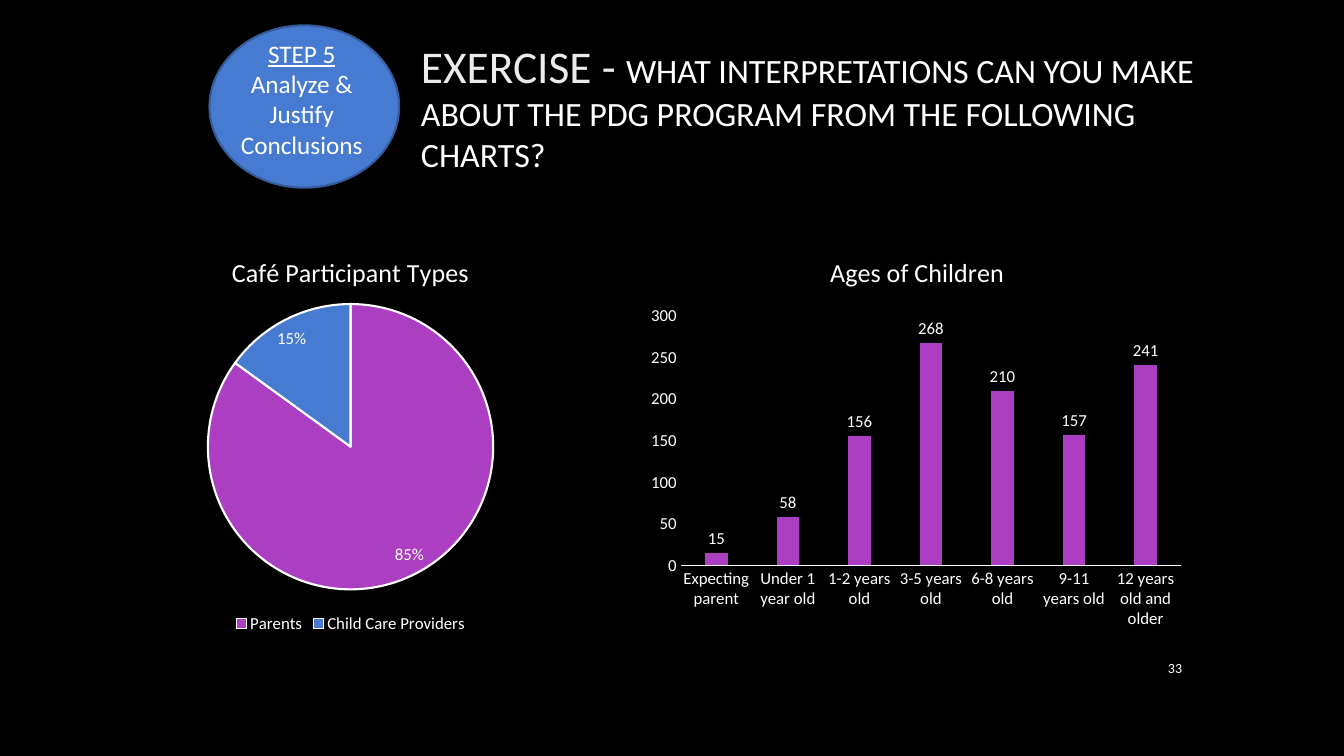
from lxml import etree
from pptx import Presentation
from pptx.chart.data import CategoryChartData
from pptx.dml.color import RGBColor
from pptx.enum.chart import XL_CHART_TYPE, XL_LABEL_POSITION, XL_LEGEND_POSITION, XL_TICK_MARK
from pptx.enum.shapes import MSO_SHAPE
from pptx.enum.text import MSO_ANCHOR, PP_ALIGN
from pptx.oxml.ns import qn
from pptx.util import Cm, Pt

PIE, COLUMN = XL_CHART_TYPE.PIE, XL_CHART_TYPE.COLUMN_CLUSTERED
BEST_FIT, OUTSIDE_END = XL_LABEL_POSITION.BEST_FIT, XL_LABEL_POSITION.OUTSIDE_END
LEGEND_BOTTOM = XL_LEGEND_POSITION.BOTTOM
NO_TICK = XL_TICK_MARK.NONE
OVAL = MSO_SHAPE.OVAL
TOP, MIDDLE = MSO_ANCHOR.TOP, MSO_ANCHOR.MIDDLE
LEFT, CENTER, RIGHT = PP_ALIGN.LEFT, PP_ALIGN.CENTER, PP_ALIGN.RIGHT

FONT = "Calibri"
COLORS = {
    "background": "000000",
    "text": "FFFFFF",
    "heading": "EBEBEB",
    "purple": "AC3EC1",
    "blue": "477BD1",
    "outline": "355B9B",
}
CHART_TOP, CHART_WIDTH, CHART_HEIGHT = 5.94, 13.87, 10.13


def color(name):
    return RGBColor.from_string(COLORS[name])


def set_font(font, size, color_name="text"):
    font.name = FONT
    font.size = Pt(size)
    font.bold = False
    font.color.rgb = color(color_name)


def paint(chart_format, color_name):
    chart_format.fill.solid()
    chart_format.fill.fore_color.rgb = color(color_name)


def add_text(slide, box, paragraphs, alignment=LEFT, anchor=TOP):
    """Each paragraph is a list of (text, size, color name, underline) runs."""
    shape = slide.shapes.add_textbox(*map(Cm, box))
    frame = shape.text_frame
    frame.word_wrap = True
    frame.vertical_anchor = anchor
    for index, runs in enumerate(paragraphs):
        paragraph = frame.add_paragraph() if index else frame.paragraphs[0]
        paragraph.alignment = alignment
        for text, size, color_name, underline in runs:
            run = paragraph.add_run()
            run.text = text
            set_font(run.font, size, color_name)
            run.font.underline = underline


def add_oval(slide, box):
    shape = slide.shapes.add_shape(OVAL, *map(Cm, box))
    shape.shadow.inherit = False
    paint(shape, "blue")
    shape.line.color.rgb = color("outline")
    shape.line.width = Pt(1.5)


def place_plot(chart, x, y, width, height):
    """Fix the inner plot area, in fractions of the chart."""
    plot_area = chart.element.find(".//" + qn("c:plotArea"))
    layout = plot_area.find(qn("c:layout"))
    if layout is None:
        layout = etree.Element(qn("c:layout"))
        plot_area.insert(0, layout)
    manual = etree.SubElement(layout, qn("c:manualLayout"))
    settings = [("layoutTarget", "inner"), ("xMode", "edge"), ("yMode", "edge"),
                ("x", x), ("y", y), ("w", width), ("h", height)]
    for tag, value in settings:
        etree.SubElement(manual, qn("c:" + tag)).set("val", str(value))


def add_chart(slide, kind, left, title, series_name, values, label_position, number_format):
    data = CategoryChartData(number_format=number_format)
    data.categories = list(values)
    data.add_series(series_name, list(values.values()))
    frame = slide.shapes.add_chart(
        kind, Cm(left), Cm(CHART_TOP), Cm(CHART_WIDTH), Cm(CHART_HEIGHT), data)
    chart = frame.chart
    set_font(chart.font, 12)
    chart.has_legend = False
    chart.has_title = True
    chart.chart_title.include_in_layout = False
    paragraph = chart.chart_title.text_frame.paragraphs[0]
    paragraph.text = title
    set_font(paragraph.font, 18.6)

    plot = chart.plots[0]
    plot.vary_by_categories = kind == PIE
    plot.has_data_labels = True
    labels = plot.data_labels
    labels.show_value = True
    labels.show_percentage = False
    labels.number_format = number_format
    labels.number_format_is_linked = False
    labels.position = label_position
    set_font(labels.font, 12)
    return chart


def add_participant_pie(slide):
    chart = add_chart(slide, PIE, 1.9, "Café Participant Types", "Series 1",
                      {"Parents": 0.85, "Child Care Providers": 0.15}, BEST_FIT, "0%")
    place_plot(chart, 0.24, 0.17, 0.52, 0.71)
    chart.has_legend = True
    chart.legend.position = LEGEND_BOTTOM
    chart.legend.include_in_layout = False
    set_font(chart.legend.font, 12)
    for index, name in enumerate(("purple", "blue")):
        point_format = chart.plots[0].series[0].points[index].format
        paint(point_format, name)
        point_format.line.color.rgb = color("text")
        point_format.line.width = Pt(1.5)


def add_ages_columns(slide):
    ages = {
        "Expecting parent": 15,
        "Under 1 year old": 58,
        "1-2 years old": 156,
        "3-5 years old": 268,
        "6-8 years old": 210,
        "9-11 years old": 157,
        "12 years old and older": 241,
    }
    chart = add_chart(slide, COLUMN, 16.18, "Ages of Children", "Ages of Children",
                      ages, OUTSIDE_END, "General")
    place_plot(chart, 0.07, 0.2, 0.91, 0.62)
    plot = chart.plots[0]
    plot.gap_width = 219
    plot.overlap = -27
    paint(plot.series[0].format, "purple")
    for axis in (chart.category_axis, chart.value_axis):
        axis.has_major_gridlines = False
        axis.major_tick_mark = axis.minor_tick_mark = NO_TICK
        set_font(axis.tick_labels.font, 12)
    chart.category_axis.format.line.color.rgb = color("text")
    chart.category_axis.format.line.width = Pt(0.75)
    chart.value_axis.format.line.fill.background()
    chart.value_axis.minimum_scale = 0
    chart.value_axis.maximum_scale = 300
    chart.value_axis.major_unit = 50


def main():
    presentation = Presentation()
    presentation.slide_width, presentation.slide_height = Cm(33.87), Cm(19.05)
    slide = presentation.slides.add_slide(presentation.slide_layouts[6])
    paint(slide.background, "background")

    # Heading
    question = ("WHAT INTERPRETATIONS CAN YOU MAKE ABOUT THE PDG PROGRAM "
                "FROM THE FOLLOWING CHARTS?")
    add_text(slide, (10.36, 0.84, 21.59, 4.9),
             [[("EXERCISE - ", 32.4, "heading", False), (question, 24.3, "text", False)]])

    # Charts
    add_participant_pie(slide)
    add_ages_columns(slide)

    # Slide number
    add_text(slide, (28.52, 16.31, 1.52, 1.04), [[("33", 10, "text", False)]], RIGHT, MIDDLE)

    # Step badge
    add_oval(slide, (5.28, 0.64, 4.78, 4.09))
    add_text(slide, (5.28, 0.84, 4.65, 3.3),
             [[("STEP 5", 18, "text", True)],
              [("Analyze & Justify Conclusions", 18, "text", False)]], CENTER)

    presentation.save("out.pptx")


if __name__ == "__main__":
    main()
